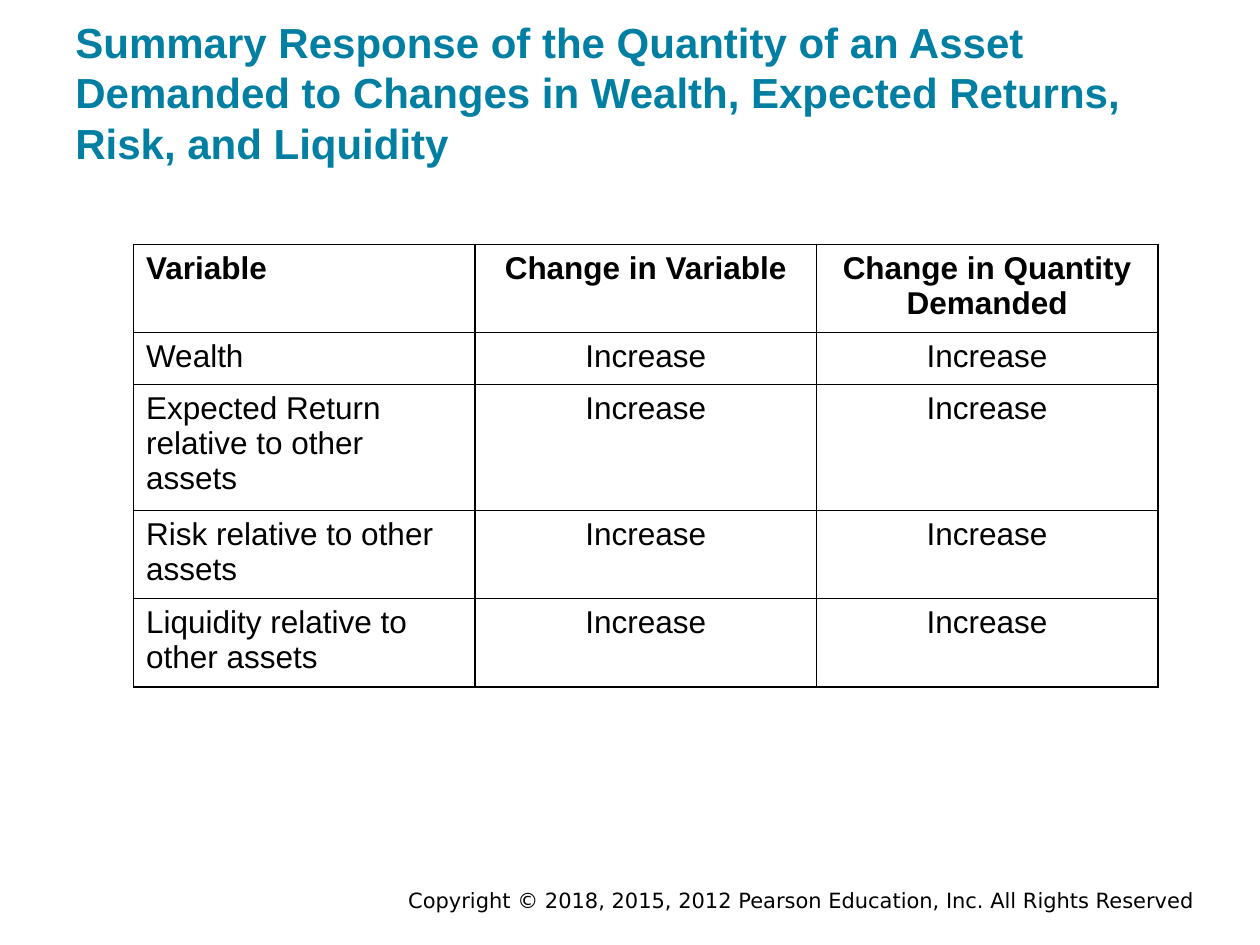
from lxml.etree import SubElement
from pptx import Presentation
from pptx.dml.color import RGBColor
from pptx.enum.text import MSO_ANCHOR as Anchor, PP_ALIGN as Align
from pptx.oxml.ns import qn
from pptx.util import Inches, Pt

TITLE = ("Summary Response of the Quantity of an Asset Demanded to Changes in "
         "Wealth, Expected Returns, Risk, and Liquidity")
COPYRIGHT = "Copyright © 2018, 2015, 2012 Pearson Education, Inc. All Rights Reserved"
ROWS = [
    ("Variable", "Change in Variable", "Change in Quantity Demanded"),
    ("Wealth", "Increase", "Increase"),
    ("Expected Return relative to other assets", "Increase", "Increase"),
    ("Risk relative to other assets", "Increase", "Increase"),
    ("Liquidity relative to other assets", "Increase", "Increase"),
]
BLACK, WHITE, TEAL = "000000", "FFFFFF", "007FA3"
COLUMN_WIDTH, ROW_HEIGHT = 2.71, 0.41


def color(value):
    """Turn a hex string into a colour."""
    return RGBColor.from_string(value)


def write(frame, text, size, font="Arial", ink=BLACK, bold=False, align=Align.LEFT):
    """Put one styled run in the first paragraph of a frame."""
    para = frame.paragraphs[0]
    para.alignment = align
    span = para.add_run()
    span.text = text
    span.font.size = Pt(size)
    span.font.name = font
    span.font.bold = bold
    span.font.color.rgb = color(ink)


def add_text(slide, place, text, size, anchor, inset, **style):
    """Add a wrapping text box."""
    frame = slide.shapes.add_textbox(*map(Inches, place)).text_frame
    frame.word_wrap = True
    frame.vertical_anchor = anchor
    frame.margin_top = frame.margin_bottom = Inches(inset)
    write(frame, text, size, **style)


def add_borders(cell):
    """Draw a thin black line on each side of a cell."""
    properties = cell._tc.get_or_add_tcPr()
    for side in ("lnL", "lnR", "lnT", "lnB"):
        line = SubElement(properties, qn(f"a:{side}"), w=str(Pt(1)))
        fill = SubElement(line, qn("a:solidFill"))
        SubElement(fill, qn("a:srgbClr"), val=BLACK)


def add_summary(slide, left, top):
    """Add the table of responses."""
    count = len(ROWS[0])
    size = (COLUMN_WIDTH * count, ROW_HEIGHT * len(ROWS))
    table = slide.shapes.add_table(
        len(ROWS), count, *map(Inches, (left, top, *size))).table
    for column in table.columns:
        column.width = Inches(COLUMN_WIDTH)
    for r, texts in enumerate(ROWS):
        table.rows[r].height = Inches(ROW_HEIGHT)
        for c, text in enumerate(texts):
            cell = table.cell(r, c)
            add_borders(cell)
            cell.fill.solid()
            cell.fill.fore_color.rgb = color(WHITE)
            write(cell.text_frame, text, 18, bold=r == 0,
                  align=Align.CENTER if c else Align.LEFT)


def main():
    """Build and save the slide."""
    deck = Presentation()
    deck.slide_width, deck.slide_height = Inches(10), Inches(7.5)
    slide = deck.slides.add_slide(deck.slide_layouts[6])
    add_text(slide, (1.75, 7.03, 7.83, 0.22), COPYRIGHT, 12, Anchor.MIDDLE, 0.05,
             font="DejaVu Sans", align=Align.RIGHT)
    add_text(slide, (0.5, 0.09, 8.99, 1.34), TITLE, 24, Anchor.BOTTOM, 0.1,
             ink=TEAL, bold=True)
    add_summary(slide, 1.06, 1.94)
    deck.save("out.pptx")


if __name__ == "__main__":
    main()
